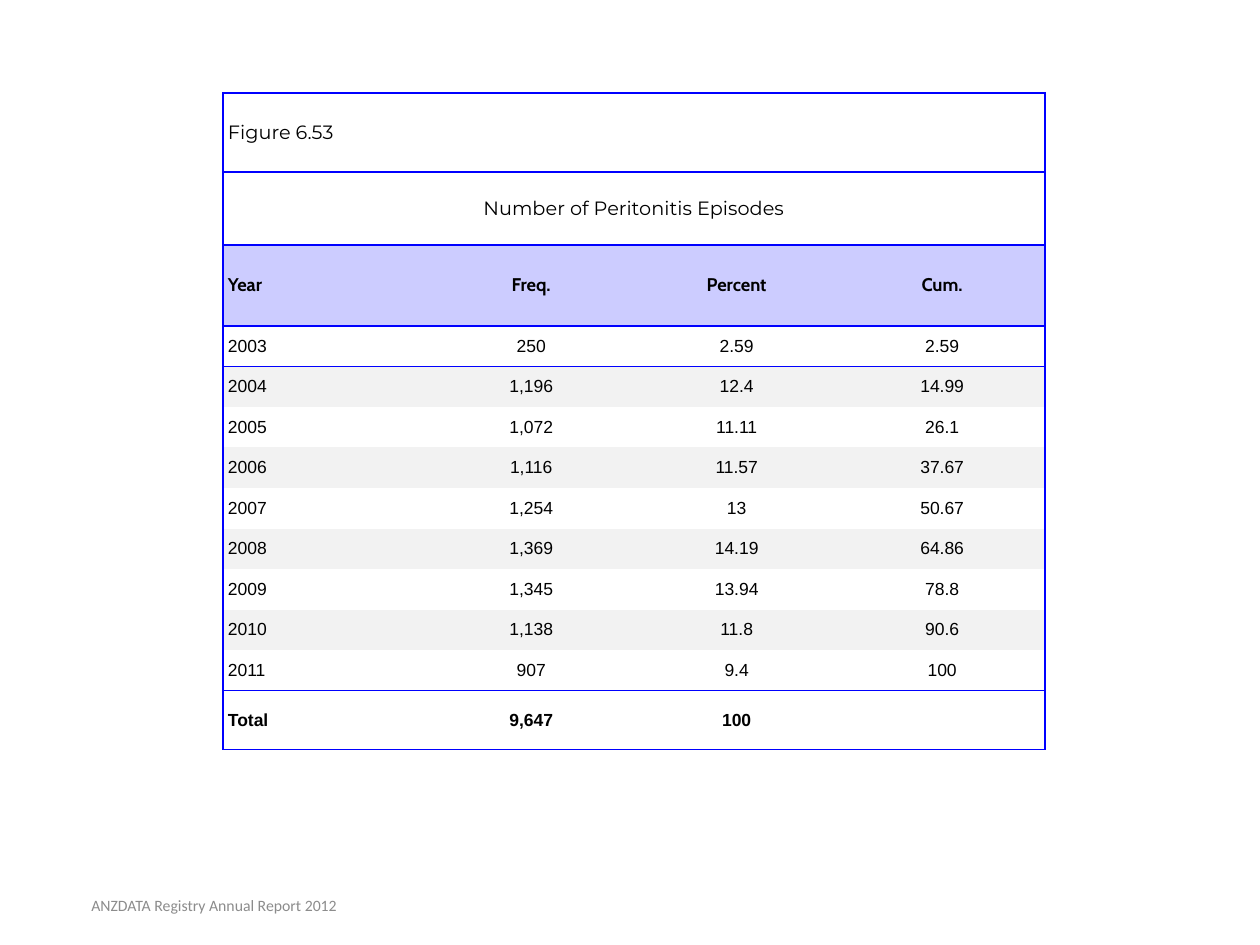
import pptx
import pptx.dml.color
import pptx.enum.text
import pptx.oxml
import pptx.oxml.ns
import pptx.util

RGBColor = pptx.dml.color.RGBColor
Align = pptx.enum.text.PP_ALIGN
Anchor = pptx.enum.text.MSO_ANCHOR

BLACK = RGBColor(0x00, 0x00, 0x00)
BLUE = RGBColor(0x00, 0x00, 0xFF)
LAVENDER = RGBColor(0xCC, 0xCC, 0xFF)
LIGHT_GRAY = RGBColor(0xF2, 0xF2, 0xF2)
GRAY = RGBColor(0x8C, 0x8C, 0x8C)

TITLES = ["Figure 6.53", "Number of Peritonitis Episodes"]
HEADINGS = ("Year", "Freq.", "Percent", "Cum.")
YEARS = [
    ("2003", "250", "2.59", "2.59"),
    ("2004", "1,196", "12.4", "14.99"),
    ("2005", "1,072", "11.11", "26.1"),
    ("2006", "1,116", "11.57", "37.67"),
    ("2007", "1,254", "13", "50.67"),
    ("2008", "1,369", "14.19", "64.86"),
    ("2009", "1,345", "13.94", "78.8"),
    ("2010", "1,138", "11.8", "90.6"),
    ("2011", "907", "9.4", "100"),
]
TOTAL = ("Total", "9,647", "100", "")
FOOTER = "ANZDATA Registry Annual Report 2012"

PX_PER_INCH = 126
TABLE_LEFT, TABLE_TOP, TABLE_WIDTH = 223, 93, 822
TITLE_HEIGHTS = [79, 73]
HEADING_HEIGHT, YEARS_HEIGHT, TOTAL_HEIGHT = 81, 365, 59
PLAIN_STYLE = "{2D5ABB26-0587-4C30-8999-92F81FD0307C}"


def px(value):
    return round(value * pptx.util.Inches(1) / PX_PER_INCH)


def write(frame, text, size, font, color=BLACK, bold=False, align=Align.CENTER):
    paragraph = frame.paragraphs[0]
    paragraph.alignment = align
    run = paragraph.add_run()
    run.text = text
    run.font.size = pptx.util.Pt(size)
    run.font.name = font
    run.font.bold = bold
    run.font.color.rgb = color


def set_borders(cell, sides):
    """Draw 1 pt blue lines on the given sides, a subset of "LRTB" in that order."""
    properties = cell._tc.get_or_add_tcPr()
    for position, side in enumerate(sides):
        line = pptx.oxml.parse_xml(
            f'<a:ln{side} {pptx.oxml.ns.nsdecls("a")} w="{pptx.util.Pt(1)}">'
            f'<a:solidFill><a:srgbClr val="{BLUE}"/></a:solidFill></a:ln{side}>'
        )
        properties.insert(position, line)


def format_cell(cell, fill, margin, sides):
    cell.vertical_anchor = Anchor.MIDDLE
    cell.margin_left = cell.margin_right = px(5)
    cell.margin_top = cell.margin_bottom = px(margin)
    if fill is None:
        cell.fill.background()
    else:
        cell.fill.solid()
        cell.fill.fore_color.rgb = fill
    set_borders(cell, sides)


def add_episode_table(slide):
    rows = [(title, "", "", "") for title in TITLES] + [HEADINGS, *YEARS, TOTAL]
    heights = [*TITLE_HEIGHTS, HEADING_HEIGHT,
               *[YEARS_HEIGHT / len(YEARS)] * len(YEARS), TOTAL_HEIGHT]
    heading_row, total_row = len(TITLES), len(rows) - 1
    last_column = len(HEADINGS) - 1
    ruled_above = {*range(heading_row + 2), total_row}
    ruled_below = {row - 1 for row in ruled_above} | {total_row}

    table = slide.shapes.add_table(
        len(rows), len(HEADINGS), px(TABLE_LEFT), px(TABLE_TOP),
        px(TABLE_WIDTH), px(sum(heights))).table
    table.first_row = table.horz_banding = False
    table._tbl.tblPr.find(pptx.oxml.ns.qn("a:tableStyleId")).text = PLAIN_STYLE
    for column in table.columns:
        column.width = px(TABLE_WIDTH / len(HEADINGS))

    for row, (texts, height) in enumerate(zip(rows, heights)):
        table.rows[row].height = px(height)
        is_title = row < heading_row
        size, font, fill = 10, "Arial", None
        if is_title:
            size, font = 11, "Montserrat"
            table.cell(row, 0).merge(table.cell(row, last_column))
        elif row == heading_row:
            size, font, fill = 10.5, "Cabin", LAVENDER
        elif row < total_row and (row - heading_row) % 2 == 0:
            fill = LIGHT_GRAY
        for column, text in enumerate(texts):
            cell = table.cell(row, column)
            sides = [side for side, shown in (
                ("L", column == 0),
                ("R", column == last_column or (is_title and column == 0)),
                ("T", row in ruled_above),
                ("B", row in ruled_below)) if shown]
            format_cell(cell, fill, 5 if is_title else 2, sides)
            centered = column > 0 or text == TITLES[1]
            if text:
                write(cell.text_frame, text, size, font,
                      bold=row in (heading_row, total_row),
                      align=Align.CENTER if centered else Align.LEFT)


def add_footer(slide):
    box = slide.shapes.add_textbox(px(25), px(880), px(378), px(50))
    box.text_frame.word_wrap = True
    box.text_frame.vertical_anchor = Anchor.MIDDLE
    write(box.text_frame, FOOTER, 9, "Calibri", color=GRAY)


def main():
    presentation = pptx.Presentation()
    presentation.slide_width = px(1260)
    presentation.slide_height = px(945)
    slide = presentation.slides.add_slide(presentation.slide_layouts[6])
    add_episode_table(slide)
    add_footer(slide)
    presentation.save("out.pptx")


if __name__ == "__main__":
    main()
